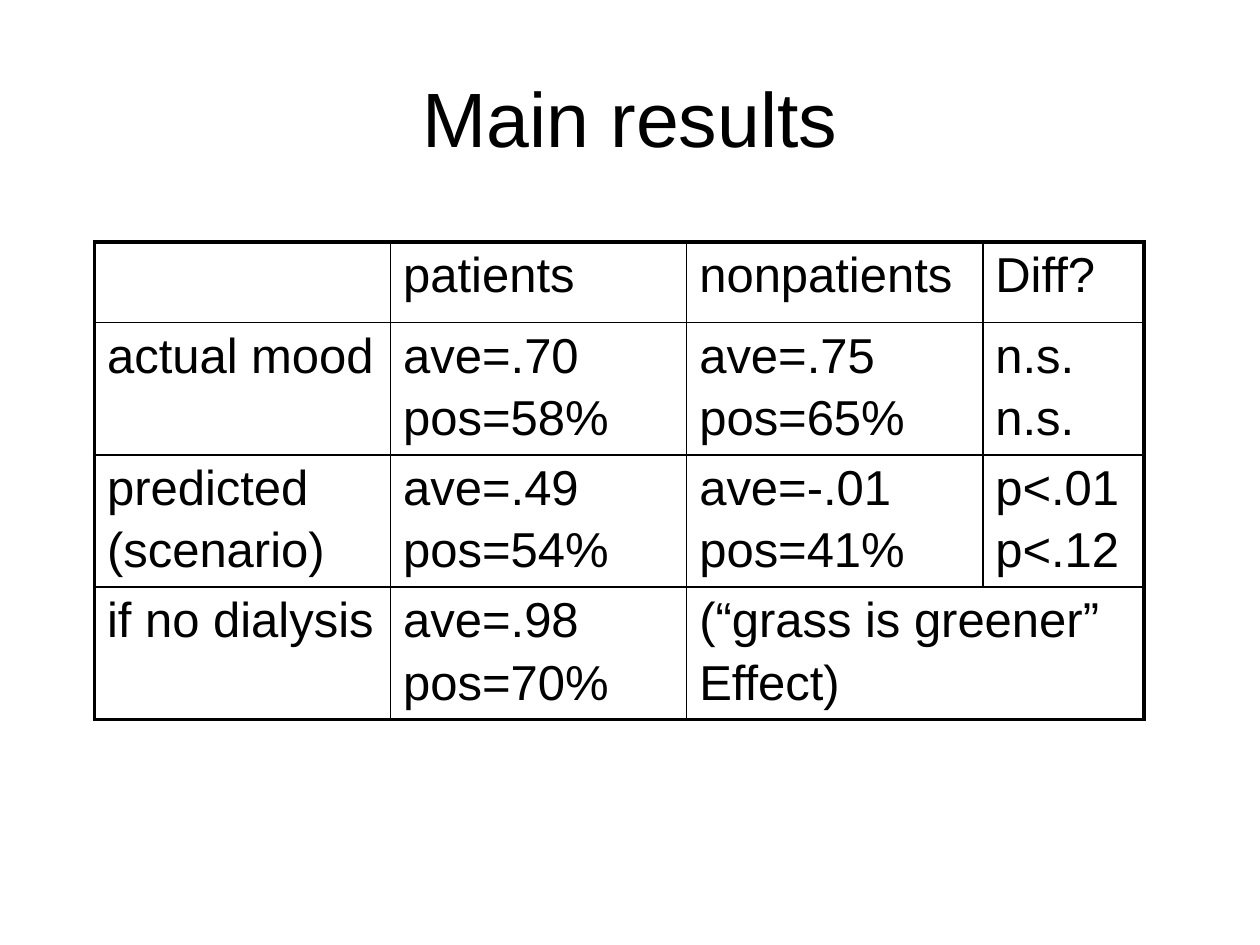
from lxml.etree import SubElement
from pptx import Presentation
from pptx.dml.color import RGBColor
from pptx.enum.text import MSO_ANCHOR, PP_ALIGN
from pptx.oxml.ns import qn
from pptx.util import Inches, Pt

BLACK = RGBColor(0, 0, 0)
FONT = "Arial"
THIN, THICK = Pt(1), Pt(2.25)

COLUMNS = [2.35, 2.35, 2.35, 1.28]
ROWS = [0.64, 1.05, 1.05, 1.05]
RESULTS = [
    ["", "patients", "nonpatients", "Diff?"],
    ["actual mood", "ave=.70\npos=58%", "ave=.75\npos=65%", "n.s.\nn.s."],
    ["predicted\n(scenario)", "ave=.49\npos=54%", "ave=-.01\npos=41%", "p<.01\np<.12"],
    ["if no dialysis", "ave=.98\npos=70%", "(“grass is greener”\nEffect)", ""],
]


def write_text(tf, text, size=28, align=PP_ALIGN.LEFT, gap=4.4):
    for i, line in enumerate(text.split("\n")):
        p = tf.add_paragraph() if i else tf.paragraphs[0]
        p.alignment = align
        p.space_before = Pt(gap if i else 0)
        p.font.size = Pt(size)
        if line:
            r = p.add_run()
            r.text = line
            r.font.name = FONT
            r.font.size = Pt(size)
            r.font.bold = False
            r.font.color.rgb = BLACK


def set_borders(cell, **widths):
    tc_pr = cell._tc.get_or_add_tcPr()
    for side in "LRTB":
        ln = SubElement(tc_pr, qn(f"a:ln{side}"), w=str(int(widths[side])))
        fill = SubElement(ln, qn("a:solidFill"))
        SubElement(fill, qn("a:srgbClr"), val=str(BLACK))


def add_title(s, text, left, top, width, height):
    sp = s.shapes.title
    sp.left, sp.top, sp.width, sp.height = map(Inches, (left, top, width, height))
    sp.text_frame.vertical_anchor = MSO_ANCHOR.MIDDLE
    write_text(sp.text_frame, text, size=44, align=PP_ALIGN.CENTER)


def add_results_table(s, left, top):
    n_rows, n_cols = len(ROWS), len(COLUMNS)
    table = s.shapes.add_table(
        n_rows, n_cols, Inches(left), Inches(top),
        Inches(sum(COLUMNS)), Inches(sum(ROWS)),
    ).table
    table.first_row = table.horz_banding = False
    for column, width in zip(table.columns, COLUMNS):
        column.width = Inches(width)
    for row, height in zip(table.rows, ROWS):
        row.height = Inches(height)
    table.cell(3, 2).merge(table.cell(3, 3))
    for i, texts in enumerate(RESULTS):
        for j, text in enumerate(texts):
            cell = table.cell(i, j)
            last_col = j == n_cols - 1 or cell.is_merge_origin
            set_borders(
                cell,
                L=THIN if j else THICK,
                R=THICK if last_col else THIN,
                T=THIN if i else THICK,
                B=THICK if i == n_rows - 1 else THIN,
            )
            cell.fill.background()
            write_text(cell.text_frame, text)


def main():
    prs = Presentation()
    prs.slide_width, prs.slide_height = Inches(10), Inches(7.5)
    s = prs.slides.add_slide(prs.slide_layouts[5])
    add_title(s, "Main results", 0.5, 0.3, 9, 1.25)
    add_results_table(s, 0.75, 1.92)
    prs.save("out.pptx")


if __name__ == "__main__":
    main()
